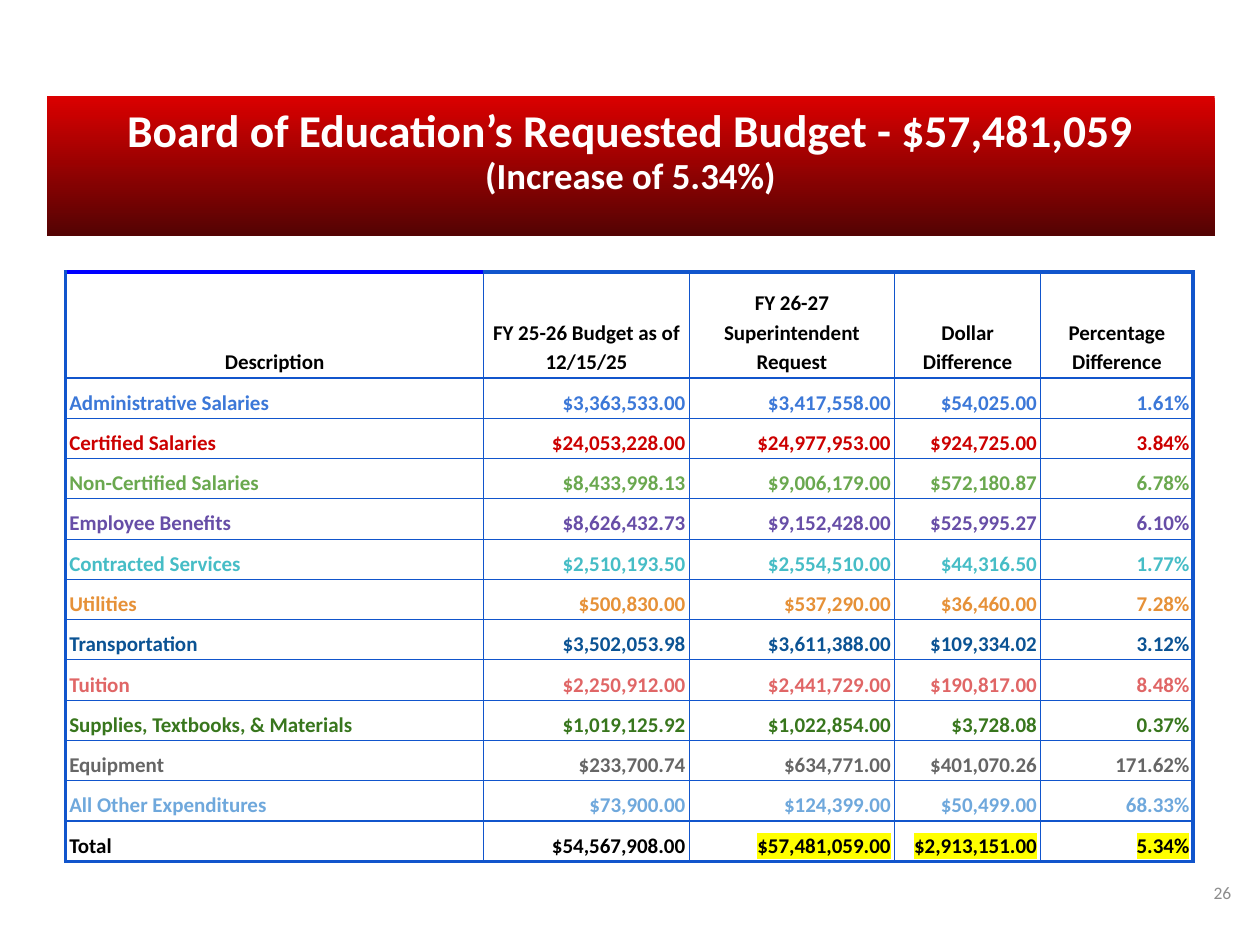
from lxml import etree
from pptx import Presentation
from pptx.dml.color import RGBColor
from pptx.enum import text
from pptx.oxml import ns
from pptx.util import Inches, Pt

WHITE = RGBColor(0xFF, 0xFF, 0xFF)
BLACK = RGBColor(0x00, 0x00, 0x00)
RED_TOP = RGBColor(0xDB, 0x00, 0x00)
RED_BOTTOM = RGBColor(0x54, 0x03, 0x03)
GRID_BLUE = RGBColor(0x11, 0x55, 0xCC)
CORNER_BLUE = RGBColor(0x00, 0x00, 0xFF)
YELLOW = RGBColor(0xFF, 0xFF, 0x00)
NUMBER_GREY = RGBColor(0x8C, 0x8C, 0x8C)
LEFT, CENTER, RIGHT = (text.PP_ALIGN.LEFT, text.PP_ALIGN.CENTER,
                       text.PP_ALIGN.RIGHT)


def style_font(font, size, color, bold):
    font.color.rgb = color
    for attribute, value in {"name": "Calibri", "size": Pt(size), "bold": bold}.items():
        setattr(font, attribute, value)


def add_border(cell, side, color, width):
    line = etree.SubElement(cell._tc.get_or_add_tcPr(), ns.qn(f"a:ln{side}"),
                            w=str(Pt(width)))
    fill = etree.SubElement(line, ns.qn("a:solidFill"))
    etree.SubElement(fill, ns.qn("a:srgbClr"), val=str(color))


prs = Presentation()
prs.slide_width, prs.slide_height = Inches(10), Inches(7.5)
slide = prs.slides.add_slide(prs.slide_layouts[5])

# Title banner
title = slide.shapes.title
title.left, title.top = Inches(0.37), Inches(0.76)
title.width, title.height = Inches(9.27), Inches(1.11)
title.fill.gradient()
title.fill.gradient_angle = 270
for stop, color in zip(title.fill.gradient_stops, (RED_TOP, RED_BOTTOM)):
    stop.color.rgb = color

# Slide number
number = slide.shapes.add_textbox(Inches(9.27), Inches(6.8), Inches(0.6), Inches(0.57))

# Text frames of both
for frame, anchor, align, lines in (
    (title.text_frame, text.MSO_ANCHOR.TOP, CENTER,
     (("Board of Education’s Requested Budget - $57,481,059", 26, WHITE, True),
      ("(Increase of 5.34%)", 21, WHITE, True))),
    (number.text_frame, text.MSO_ANCHOR.MIDDLE, RIGHT,
     (("26", 10, NUMBER_GREY, False),)),
):
    frame.auto_size = text.MSO_AUTO_SIZE.NONE
    frame.word_wrap = True
    frame.vertical_anchor = anchor
    for side in ("left", "top", "right", "bottom"):
        setattr(frame, f"margin_{side}", Inches(0.1))
    frame.text = "\n".join(line[0] for line in lines)
    for paragraph, (_, size, color, bold) in zip(frame.paragraphs, lines):
        paragraph.alignment = align
        paragraph.space_before = Pt(0)
        paragraph.line_spacing = 0.9 if frame is not number.text_frame and bold else 1.0
        style_font(paragraph.runs[0].font, size, color, bold)

# Budget rows: text colour, then the cells
budget = [
    (BLACK, "Description", "FY 25-26 Budget as of 12/15/25",
     "FY 26-27 Superintendent Request", "Dollar Difference", "Percentage Difference"),
    (RGBColor(0x3C, 0x78, 0xD8), "Administrative Salaries",
     "$3,363,533.00", "$3,417,558.00", "$54,025.00", "1.61%"),
    (RGBColor(0xCC, 0x00, 0x00), "Certified Salaries",
     "$24,053,228.00", "$24,977,953.00", "$924,725.00", "3.84%"),
    (RGBColor(0x6A, 0xA8, 0x4F), "Non-Certified Salaries",
     "$8,433,998.13", "$9,006,179.00", "$572,180.87", "6.78%"),
    (RGBColor(0x67, 0x4E, 0xA7), "Employee Benefits",
     "$8,626,432.73", "$9,152,428.00", "$525,995.27", "6.10%"),
    (RGBColor(0x46, 0xBD, 0xC6), "Contracted Services",
     "$2,510,193.50", "$2,554,510.00", "$44,316.50", "1.77%"),
    (RGBColor(0xE6, 0x91, 0x38), "Utilities",
     "$500,830.00", "$537,290.00", "$36,460.00", "7.28%"),
    (RGBColor(0x0B, 0x53, 0x94), "Transportation",
     "$3,502,053.98", "$3,611,388.00", "$109,334.02", "3.12%"),
    (RGBColor(0xE0, 0x66, 0x66), "Tuition",
     "$2,250,912.00", "$2,441,729.00", "$190,817.00", "8.48%"),
    (RGBColor(0x38, 0x76, 0x1D), "Supplies, Textbooks, & Materials",
     "$1,019,125.92", "$1,022,854.00", "$3,728.08", "0.37%"),
    (RGBColor(0x66, 0x66, 0x66), "Equipment",
     "$233,700.74", "$634,771.00", "$401,070.26", "171.62%"),
    (RGBColor(0x6F, 0xA8, 0xDC), "All Other Expenditures",
     "$73,900.00", "$124,399.00", "$50,499.00", "68.33%"),
    (BLACK, "Total",
     "$54,567,908.00", "$57,481,059.00", "$2,913,151.00", "5.34%"),
]
column_widths = (3.32, 1.63, 1.63, 1.16, 1.21)
last_row, last_column = len(budget) - 1, len(column_widths) - 1

# Budget table
table = slide.shapes.add_table(len(budget), len(column_widths), Inches(0.52),
                               Inches(2.16), Inches(8.95), Inches(4.64)).table
table.first_row = table.horz_banding = False
for column, width in zip(table.columns, column_widths):
    column.width = Inches(width)

for r, (color, *entries) in enumerate(budget):
    table.rows[r].height = Inches(0.32 if r else 0.84)
    for c, entry in enumerate(entries):
        cell = table.cell(r, c)
        cell.text = entry
        cell.vertical_anchor = text.MSO_ANCHOR.BOTTOM
        cell.margin_left = cell.margin_right = Inches(0.03)
        cell.margin_top = cell.margin_bottom = Inches(0.02)

        # Thick outer frame, thin inner grid
        for side, outer in (("L", c == 0), ("R", c == last_column),
                            ("T", r == 0), ("B", r == last_row)):
            corner = side == "T" and r == c == 0
            add_border(cell, side, CORNER_BLUE if corner else GRID_BLUE,
                       2.25 if outer else 0.75)
        cell.fill.solid()
        cell.fill.fore_color.rgb = WHITE

        paragraph = cell.text_frame.paragraphs[0]
        paragraph.alignment = CENTER if r == 0 else LEFT if c == 0 else RIGHT
        paragraph.line_spacing = 1.15
        run = paragraph.runs[0]
        style_font(run.font, 12, color, True)

        # Requested totals are highlighted
        if r == last_row and c >= 2:
            highlight = etree.Element(ns.qn("a:highlight"))
            etree.SubElement(highlight, ns.qn("a:srgbClr"), val=str(YELLOW))
            run.font._element.find(ns.qn("a:solidFill")).addnext(highlight)

prs.save("out.pptx")
